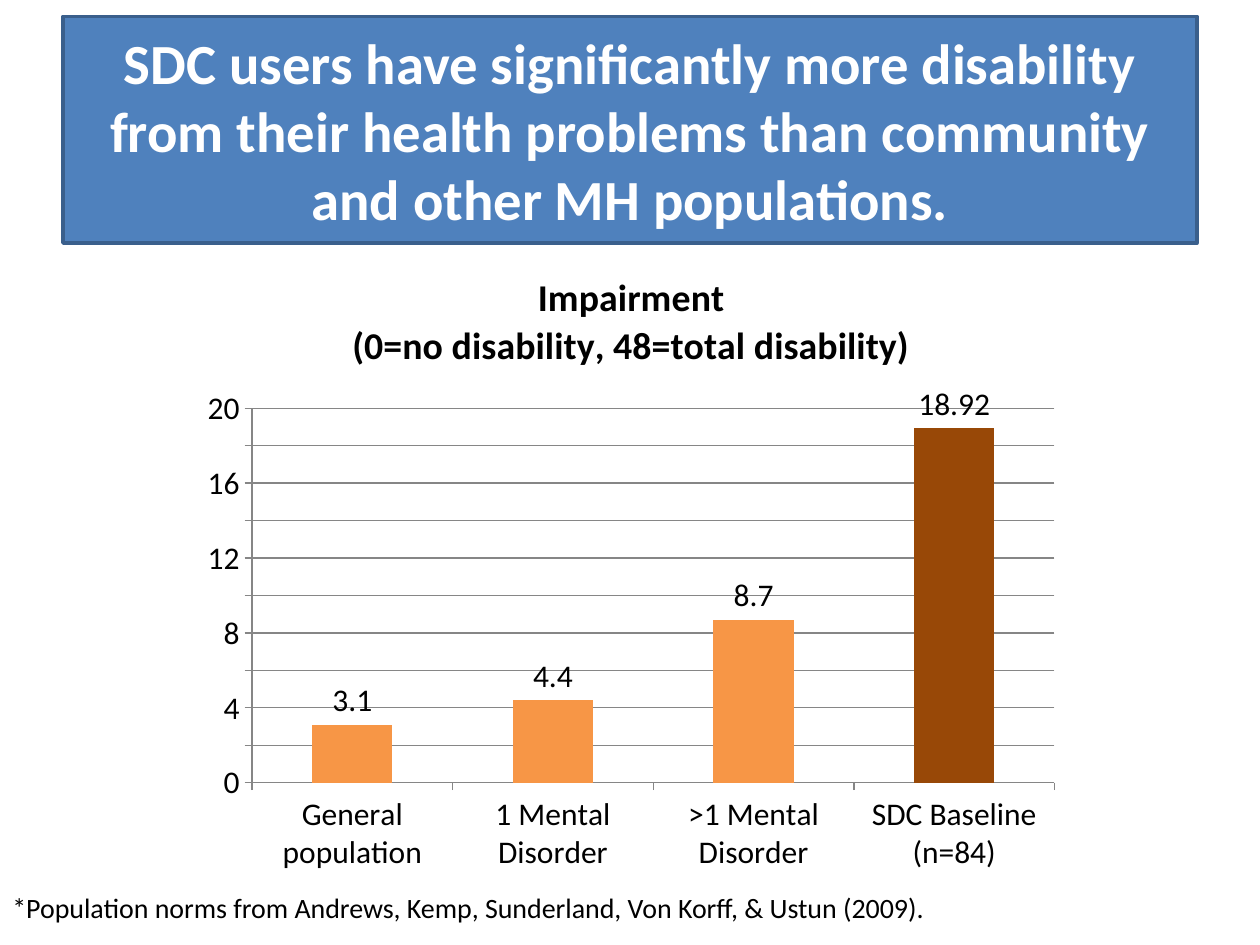
from lxml.etree import SubElement
from pptx import Presentation
from pptx.chart.data import CategoryChartData
from pptx.dml.color import RGBColor
from pptx.enum.chart import XL_CHART_TYPE, XL_LABEL_POSITION, XL_TICK_MARK
from pptx.enum.shapes import MSO_SHAPE
from pptx.enum.text import MSO_ANCHOR, MSO_AUTO_SIZE, PP_ALIGN
from pptx.oxml.ns import qn
from pptx.util import Inches, Pt


def color(value):
    """Turn a hex string into a colour."""
    return RGBColor.from_string(value)


def set_font(font, size, ink, bold=False):
    """Apply the slide's typeface with a size, colour and weight."""
    font.name = "Calibri"
    font.size = Pt(size)
    font.bold = bold
    font.color.rgb = color(ink)


def write_text(frame, text, size=18, ink="000000", bold=False, align=PP_ALIGN.LEFT):
    """Write one formatted paragraph per line of text."""
    for index, line in enumerate(text.split("\n")):
        paragraph = frame.add_paragraph() if index else frame.paragraphs[0]
        paragraph.alignment = align
        run = paragraph.add_run()
        run.text = line
        set_font(run.font, size, ink, bold)


def place_plot(chart, **fractions):
    """Fix the inner plot area as fractions of the chart."""
    plot_area = chart.plots[0]._element.getparent()
    layout = plot_area.find(qn("c:layout"))
    if layout is None:
        layout = SubElement(plot_area, qn("c:layout"))
        plot_area.insert(0, layout)
    manual = SubElement(layout, qn("c:manualLayout"))
    settings = {"layoutTarget": "inner", "xMode": "edge", "yMode": "edge", **fractions}
    for name, value in settings.items():
        SubElement(manual, qn(f"c:{name}")).set("val", str(value))


class SlideBuilder:
    """Hold the style and the current slide."""

    blue, blue_edge = "4F81BD", "3A5F8C"
    orange, brown = "F79646", "984807"
    grid, ink, white = "868686", "000000", "FFFFFF"

    def __init__(self, slide):
        """Start building on a slide."""
        self.slide = slide

    def banner(self, text, left, top, width, height):
        """Add the filled heading."""
        shape = self.slide.shapes.add_shape(
            MSO_SHAPE.RECTANGLE, Inches(left), Inches(top), Inches(width), Inches(height)
        )
        shape.shadow.inherit = False
        shape.fill.solid()
        shape.fill.fore_color.rgb = color(self.blue)
        shape.line.color.rgb = color(self.blue_edge)
        shape.line.width = Pt(2)
        frame = shape.text_frame
        frame.word_wrap = True
        frame.vertical_anchor = MSO_ANCHOR.MIDDLE
        write_text(frame, text, size=32.4, ink=self.white, bold=True, align=PP_ALIGN.CENTER)

    def footnote(self, text, left, top, width, height):
        """Add the source note."""
        box = self.slide.shapes.add_textbox(
            Inches(left), Inches(top), Inches(width), Inches(height)
        )
        box.text_frame.word_wrap = True
        box.text_frame.auto_size = MSO_AUTO_SIZE.SHAPE_TO_FIT_TEXT
        write_text(box.text_frame, text, size=16, ink=self.ink)

    def column_chart(self, title, values, highlight, left, top, width, height):
        """Add a column chart with one highlighted category."""
        data = CategoryChartData()
        data.categories = list(values)
        data.add_series("Series 1", list(values.values()))
        chart = self.slide.shapes.add_chart(
            XL_CHART_TYPE.COLUMN_CLUSTERED,
            Inches(left), Inches(top), Inches(width), Inches(height), data,
        ).chart
        set_font(chart.font, 18, self.ink)
        chart.has_legend = False
        chart.has_title = True
        chart.chart_title.include_in_layout = False
        write_text(chart.chart_title.text_frame, title, size=21.6, bold=True,
                   align=PP_ALIGN.CENTER)
        place_plot(chart, x=0.07, y=0.25, w=0.91, h=0.59)
        self.style_axes(chart)
        self.style_columns(chart.plots[0], list(values).index(highlight))

    def style_axes(self, chart):
        """Set the scale, ticks and gridlines."""
        scale = chart.value_axis
        scale.minimum_scale, scale.maximum_scale, scale.major_unit = 0, 20, 2
        scale.has_major_gridlines = True
        scale.major_gridlines.format.line.color.rgb = color(self.grid)
        for axis in (chart.category_axis, scale):
            axis.major_tick_mark = XL_TICK_MARK.OUTSIDE
            axis.format.line.color.rgb = color(self.grid)
            set_font(axis.tick_labels.font, 18, self.ink)

    def style_columns(self, plot, highlight):
        """Colour the columns and show their values."""
        plot.vary_by_categories = False
        plot.gap_width = 150
        series = plot.series[0]
        for target, fill_color in ((series, self.orange), (series.points[highlight], self.brown)):
            target.format.fill.solid()
            target.format.fill.fore_color.rgb = color(fill_color)
        labels = series.data_labels
        labels.show_value = True
        labels.position = XL_LABEL_POSITION.OUTSIDE_END
        set_font(labels.font, 18, self.ink)


def main():
    """Build and save the slide."""
    presentation = Presentation()
    presentation.slide_width = Inches(10)
    presentation.slide_height = Inches(7.5)
    builder = SlideBuilder(presentation.slides.add_slide(presentation.slide_layouts[6]))
    builder.banner(
        "SDC users have significantly more disability from their health problems "
        "than community and other MH populations.",
        0.5, 0.13, 9, 1.8,
    )
    impairment = {
        "General population": 3.1,
        "1 Mental Disorder": 4.4,
        ">1 Mental Disorder": 8.7,
        "SDC Baseline (n=84)": 18.92,
    }
    builder.column_chart(
        "Impairment\n(0=no disability, 48=total disability)",
        impairment, "SDC Baseline (n=84)", 1.51, 1.98, 7, 5.04,
    )
    builder.footnote(
        "*Population norms from Andrews, Kemp, Sunderland, Von Korff, & Ustun (2009).",
        0, 7.02, 9.8, 0.37,
    )
    presentation.save("out.pptx")


if __name__ == "__main__":
    main()
